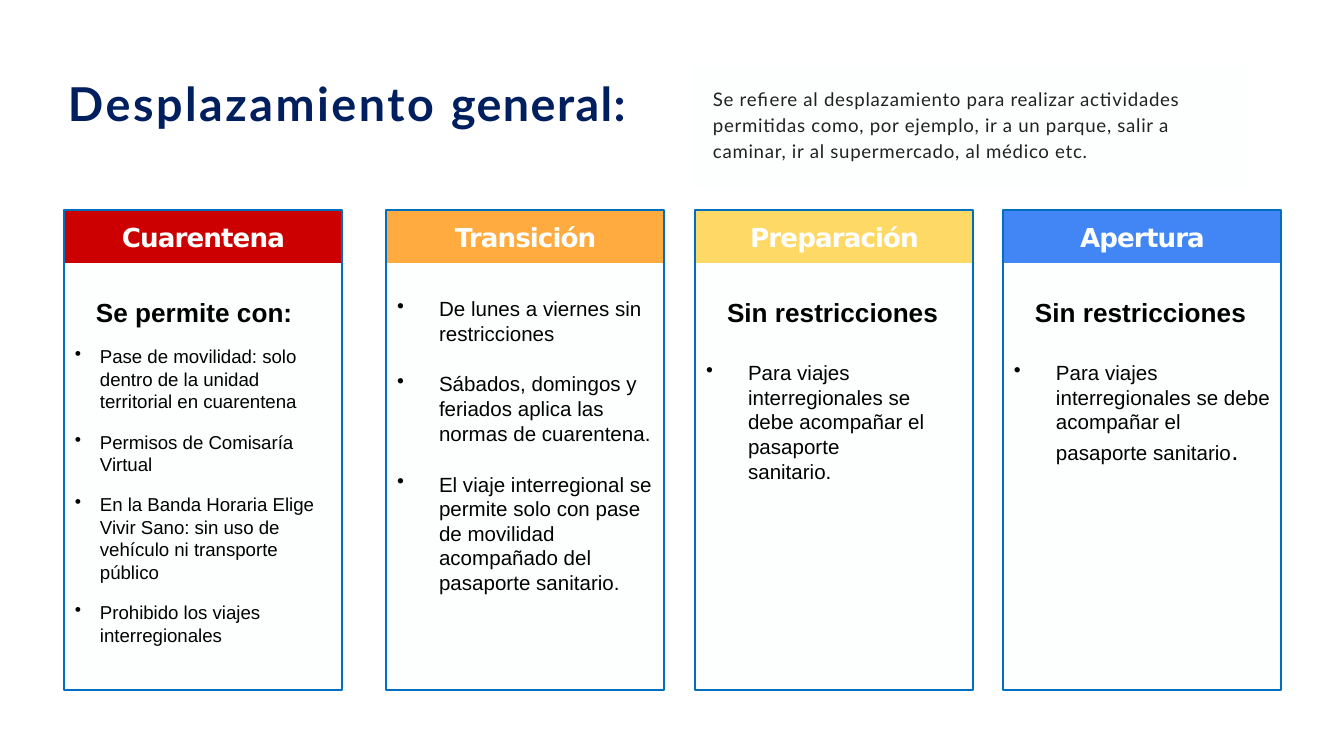
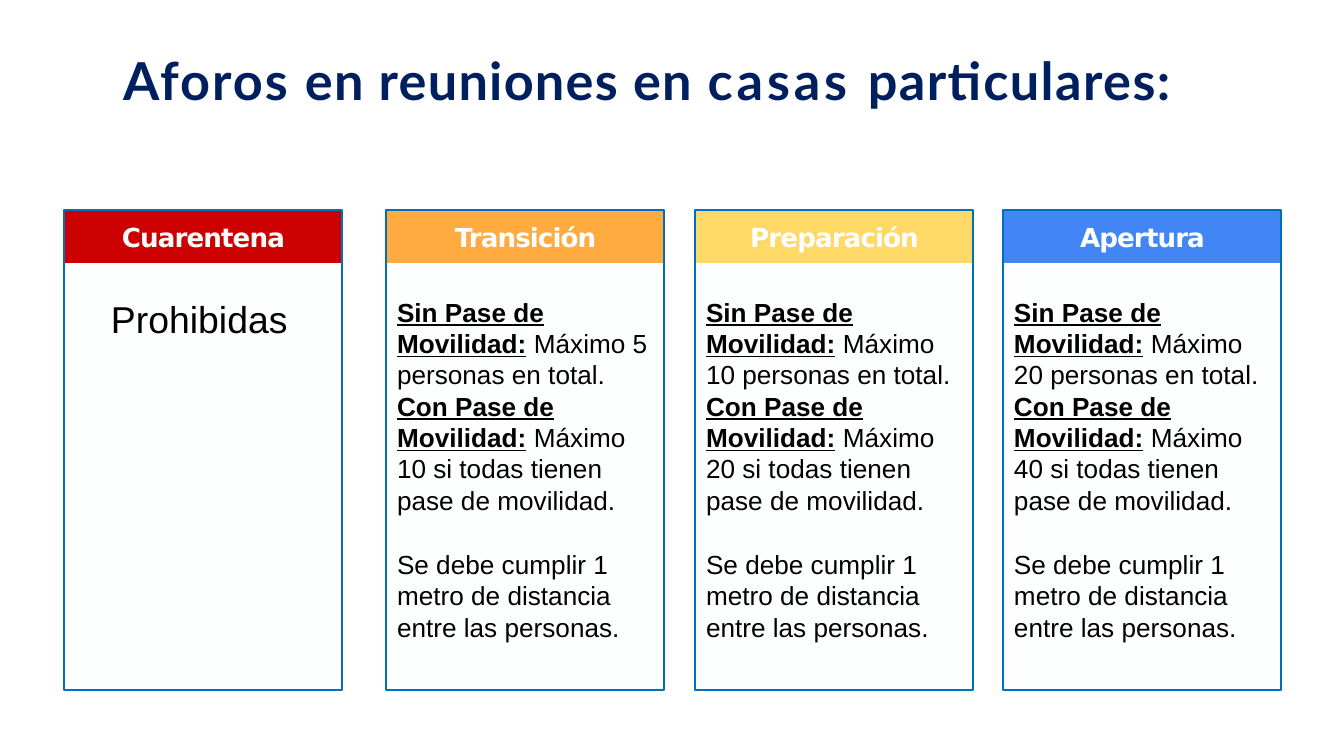
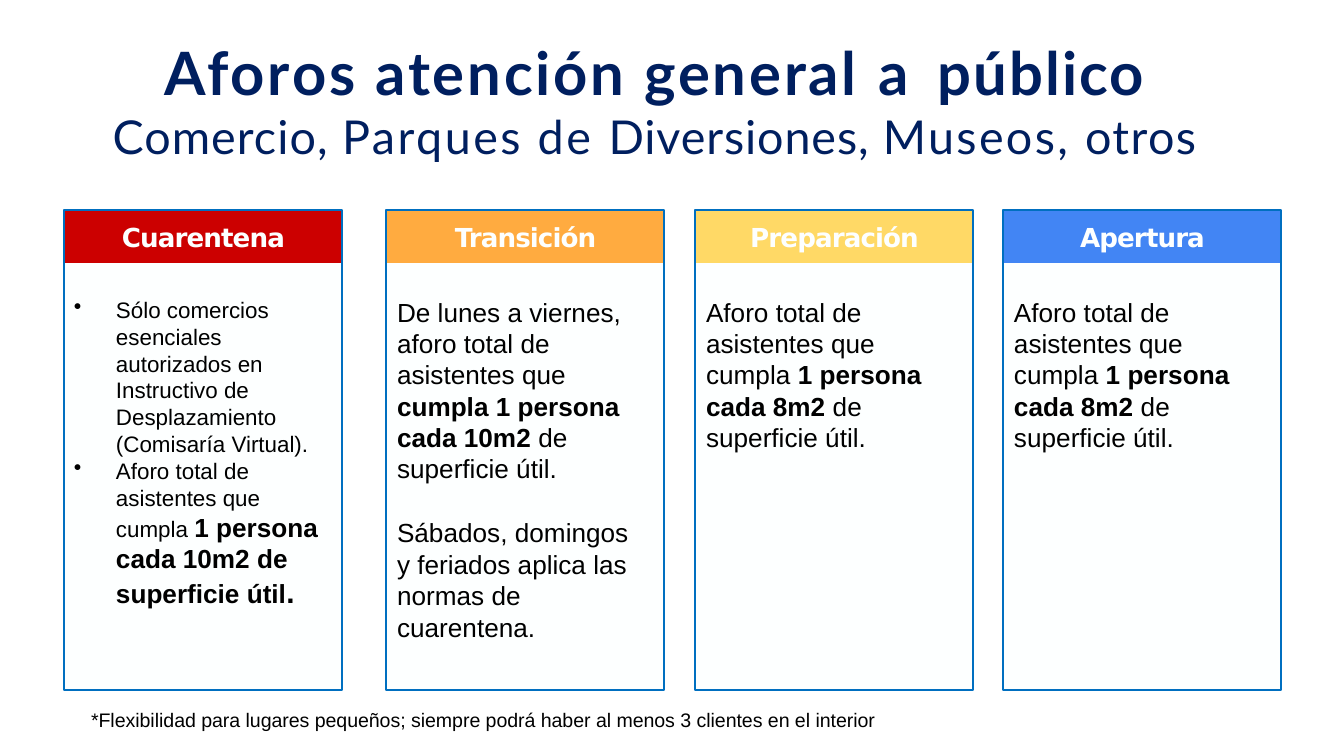
import pptx
import pptx.dml.color
import pptx.enum.shapes
import pptx.enum.text
import pptx.oxml.ns
import pptx.util
import lxml.etree

PX = 914400 / 134.4
COLORS = {
    "navy": "001F5F", "black": "000000", "gray": "212121", "panel": "FDFFFF", "border": "006FC0",
    "Cuarentena": "CC0000", "Transición": "FFAB40", "Preparación": "FFD966", "Apertura": "4285F4",
}
PHASE_LEFTS = {"Cuarentena": 64, "Transición": 386, "Preparación": 695, "Apertura": 1003}
PHASE_WIDTH, PHASE_TOP, PHASE_HEIGHT, HEADER_HEIGHT = 278, 210, 480, 52

ARIAL = {"font": {"name": "Arial", "bold": False}, "color": "black"}
LATO = {"font": {"name": "Lato", "bold": True}, "color": "navy"}
STYLES = {
    "title": {**LATO, "size": 25, "left": 1},
    "long title": {**LATO, "size": 28, "left": 1},
    "big title": {**LATO, "size": 32, "align": "CENTER"},
    "subtitle": {"font": {"name": "Lato", "bold": False}, "color": "navy", "size": 25, "align": "CENTER"},
    "definition": {"font": {"name": "Lato", "bold": False}, "color": "gray", "size": 10,
                   "left": 20, "line": 1.15, "spc": 0.4},
    "phase": {"font": {"name": "DejaVu Sans", "bold": True}, "color": "panel", "size": 14,
              "align": "CENTER", "spc": -0.5},
    "lead": {"font": {"name": "Arial", "bold": True}, "color": "black", "size": 14, "left": 31},
    "permit": {**ARIAL, "size": 10, "left": 35, "hang": 25, "gap": 9.6},
    "rule": {**ARIAL, "size": 11, "left": 52, "hang": 42, "gap": 14},
    "travel": {**ARIAL, "size": 11, "left": 52, "hang": 42, "gap": 17.5},
    "shop": {**ARIAL, "size": 12, "left": 51, "hang": 42},
    "verdict": {**ARIAL, "size": 20, "left": 46},
    "limit": {**ARIAL, "size": 14, "left": 10},
    "remark": {**ARIAL, "size": 14, "left": 10, "gap": 17.5},
    "footnote": {**ARIAL, "size": 10.5, "left": 1},
}
STRONG = {"bold": True}
PASS = {"bold": True, "underline": True}


def meeting_limits(without_pass, with_pass):
    return [
        ("limit", ("Sin Pase de Movilidad:", PASS), f" Máximo {without_pass} personas en total."),
        ("limit", ("Con Pase de Movilidad:", PASS),
         f" Máximo {with_pass} si todas tienen pase de movilidad."),
        ("remark", "Se debe cumplir 1 metro de distancia entre las personas."),
    ]


OPEN_CAPACITY = [("limit", "Aforo total de asistentes que\ncumpla ",
                  ("1 persona cada 8m2", STRONG), " de superficie útil.")]

SLIDES = [
    {
        "title": [("title", ("Desplazamiento ", {"spc": 1.4}), ("general:", {"spc": 0.8}))],
        "title box": (67, 74, 591, 59),
        "definition": [("definition", "Se refiere al desplazamiento para realizar actividades permitidas "
                        "como, por ejemplo, ir a un parque, salir a\ncaminar, ir al supermercado, "
                        "al médico etc.")],
        "phases": {
            "Cuarentena": [
                ("lead", "Se permite con:"),
                ("permit", "Pase de movilidad: solo dentro de la unidad\nterritorial en cuarentena"),
                ("permit", "Permisos de Comisaría Virtual"),
                ("permit", "En la Banda Horaria Elige Vivir Sano: sin uso de vehículo ni transporte público"),
                ("permit", "Prohibido los viajes interregionales"),
            ],
            "Transición": [
                ("rule", "De lunes a viernes sin restricciones"),
                ("rule", "Sábados, domingos y feriados aplica las normas de cuarentena."),
                ("rule", "El viaje interregional se permite solo con pase de movilidad "
                         "acompañado del pasaporte sanitario."),
            ],
            "Preparación": [
                ("lead", "Sin restricciones"),
                ("travel", "Para viajes interregionales se\ndebe acompañar el pasaporte\nsanitario."),
            ],
            "Apertura": [
                ("lead", "Sin restricciones"),
                ("travel", "Para viajes interregionales se debe acompañar el\npasaporte sanitario",
                 (".", {"size": 14})),
            ],
        },
    },
    {
        "title": [("long title", ("Aforos ", {"spc": 1.1}), ("en reuniones en ", {"spc": 0.7}),
                   ("casas ", {"spc": 2.1}), ("particulares:", {"spc": 0.8}))],
        "title box": (122, 47, 1101, 66),
        "phases": {
            "Cuarentena": [("verdict", "Prohibidas")],
            "Transición": meeting_limits(5, 10),
            "Preparación": meeting_limits(10, 20),
            "Apertura": meeting_limits(20, 40),
        },
    },
    {
        "title": [
            ("big title", ("Aforos atención general ", {"spc": 1.5}), ("a ", {"spc": 4}),
             ("público", {"spc": 1.1})),
            ("subtitle", ("Comercio, ", {"spc": 0.6}), ("Parques de ", {"spc": 1.4}),
             ("Diversiones, ", {"spc": 0.5}), ("Museos, ", {"spc": 1.3}), ("otros", {"spc": 0.8})),
        ],
        "title box": (109, 35, 1091, 132),
        "phases": {
            "Cuarentena": [
                ("shop", "Sólo comercios esenciales\nautorizados en Instructivo de "
                         "Desplazamiento (Comisaría Virtual)."),
                ("shop", "Aforo total de asistentes que\ncumpla ",
                 ("1 persona cada 10m2 de superficie útil", {"bold": True, "size": 14}),
                 (".", {"bold": True, "size": 16})),
            ],
            "Transición": [
                ("limit", "De lunes a viernes, aforo total de asistentes que ",
                 ("cumpla 1 persona cada 10m2", STRONG), " de superficie útil."),
                ("remark", "Sábados, domingos\ny feriados aplica las normas de cuarentena."),
            ],
            "Preparación": OPEN_CAPACITY,
            "Apertura": OPEN_CAPACITY,
        },
        "footnote": [("footnote", "*Flexibilidad para lugares pequeños; siempre podrá haber "
                      "al menos 3 clientes en el interior")],
    },
]


def emu(px):
    return round(px * PX)


def rgb(name):
    return pptx.dml.color.RGBColor.from_string(COLORS[name])


def add_run(paragraph, words, style, changes):
    run = paragraph.add_run()
    run.text = words
    look = {**style["font"], "size": style["size"], "spc": style.get("spc", 0), **changes}
    run._r.get_or_add_rPr().set("spc", str(round(look.pop("spc") * 100)))
    look["size"] = pptx.util.Pt(look["size"])
    for key, value in look.items():
        setattr(run.font, key, value)
    run.font.color.rgb = rgb(style["color"])


def format_paragraph(paragraph, style, first):
    hang = style.get("hang", 0)
    properties = paragraph._p.get_or_add_pPr()
    properties.set("marL", str(emu(style.get("left", 0))))
    properties.set("indent", str(-emu(hang)))
    bullet = lxml.etree.SubElement(properties, pptx.oxml.ns.qn("a:buChar" if hang else "a:buNone"))
    if hang:
        bullet.set("char", "•")
    layout = {
        "alignment": getattr(pptx.enum.text.PP_ALIGN, style.get("align", "LEFT")),
        "line_spacing": style.get("line", 1.0),
        "space_before": pptx.util.Pt(0 if first else style.get("gap", 0)),
    }
    for key, value in layout.items():
        setattr(paragraph, key, value)


def write(shape, paragraphs, top=0, right=0, anchor="TOP"):
    frame = shape.text_frame
    settings = {
        "word_wrap": True, "auto_size": pptx.enum.text.MSO_AUTO_SIZE.NONE,
        "vertical_anchor": getattr(pptx.enum.text.MSO_ANCHOR, anchor),
        "margin_left": 0, "margin_top": emu(top), "margin_right": emu(right), "margin_bottom": 0,
    }
    for key, value in settings.items():
        setattr(frame, key, value)
    for index, (style_name, *runs) in enumerate(paragraphs):
        paragraph = frame.add_paragraph() if index else frame.paragraphs[0]
        style = STYLES[style_name]
        format_paragraph(paragraph, style, index == 0)
        for run in runs:
            text, changes = (run, {}) if isinstance(run, str) else run
            for number, line in enumerate(text.split("\n")):
                if number:
                    paragraph.add_line_break()
                add_run(paragraph, line, style, changes)


def add_panel(slide, box, fill=None, border=None):
    panel = slide.shapes.add_shape(pptx.enum.shapes.MSO_SHAPE.RECTANGLE, *map(emu, box))
    panel.shadow.inherit = False
    if fill:
        panel.fill.solid()
        panel.fill.fore_color.rgb = rgb(fill)
    else:
        panel.fill.background()
    if border:
        panel.line.color.rgb = rgb(border)
        panel.line.width = pptx.util.Pt(0.75)
    else:
        panel.line.fill.background()
    return panel


def add_phase(slide, phase, rules):
    left, width = PHASE_LEFTS[phase], PHASE_WIDTH
    header_top = PHASE_TOP + 1
    body_top = header_top + HEADER_HEIGHT
    body_height = PHASE_TOP + PHASE_HEIGHT - body_top
    body = add_panel(slide, (left + 1, body_top, width - 1, body_height), "panel")
    write(body, rules, top=33, right=8)
    header = add_panel(slide, (left + 1, header_top, width - 1, HEADER_HEIGHT), phase)
    write(header, [("phase", phase)], anchor="MIDDLE")
    add_panel(slide, (left, PHASE_TOP, width, PHASE_HEIGHT), border="border")


def add_slide(deck, content):
    slide = deck.slides.add_slide(deck.slide_layouts[5])
    title = slide.shapes.title
    title.left, title.top, title.width, title.height = map(emu, content["title box"])
    write(title, content["title"], top=1)
    for phase, rules in content["phases"].items():
        add_phase(slide, phase, rules)
    if "definition" in content:
        write(add_panel(slide, (693, 66, 554, 122), "panel"), content["definition"], top=19)
    if "footnote" in content:
        footnote = slide.shapes.add_textbox(*map(emu, (90, 707, 798, 27)))
        write(footnote, content["footnote"], top=1)


def main():
    deck = pptx.Presentation()
    deck.slide_width, deck.slide_height = emu(1344), emu(756)
    for content in SLIDES:
        add_slide(deck, content)
    deck.save("out.pptx")


if __name__ == "__main__":
    main()
